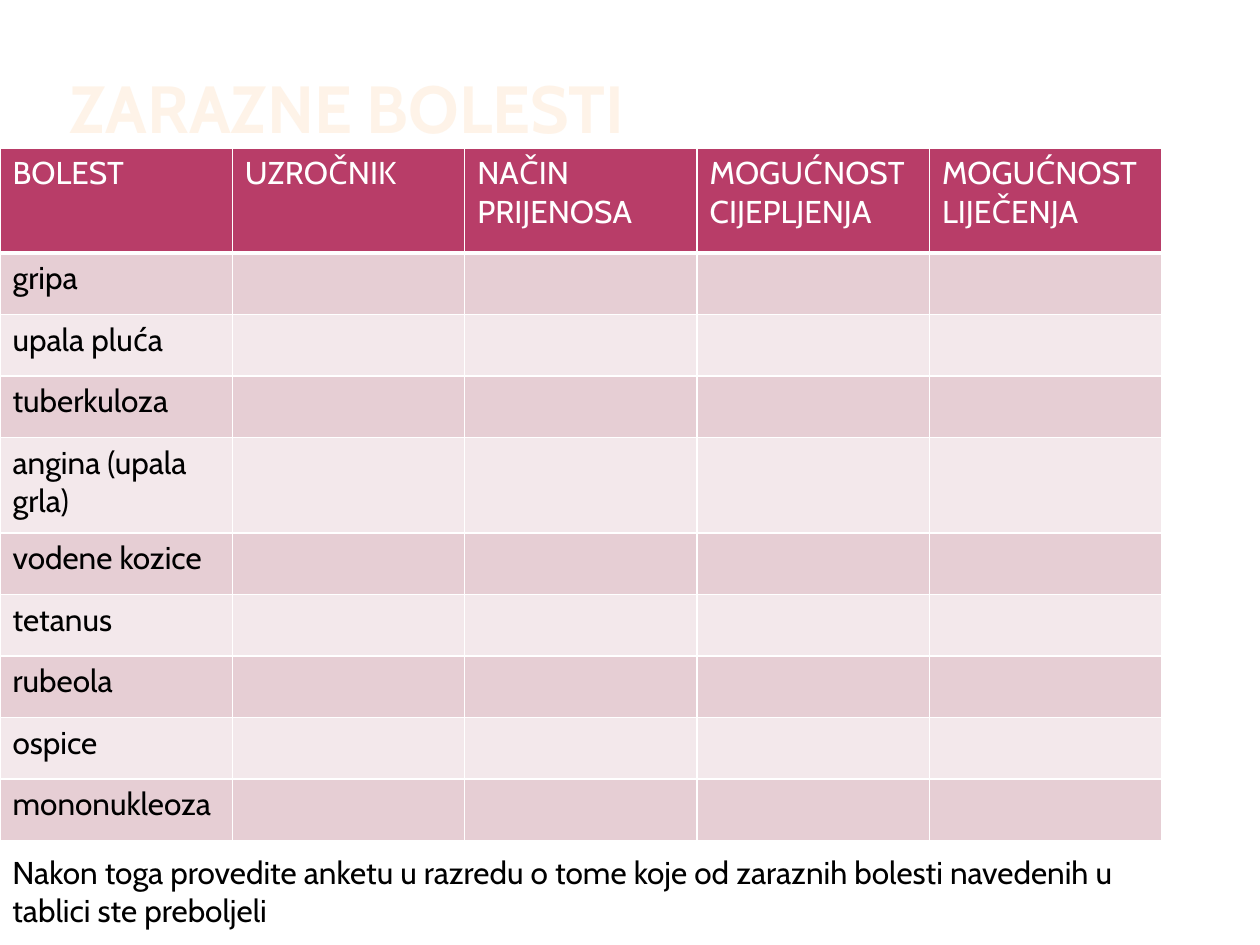
from typing import NamedTuple

import lxml.etree
import pptx
import pptx.dml.color
import pptx.enum.text
import pptx.oxml.ns
import pptx.util

Cm = pptx.util.Cm
Pt = pptx.util.Pt
RGB = pptx.dml.color.RGBColor
Enum = pptx.enum.text

WHITE = RGB(0xFF, 0xFF, 0xFF)
BLACK = RGB(0, 0, 0)
CREAM = RGB(0xFE, 0xF3, 0xE8)
BERRY = RGB(0xB8, 0x3D, 0x68)
ROSE = RGB(0xE6, 0xCE, 0xD4)
BLUSH = RGB(0xF3, 0xE8, 0xEB)

WIDTH = Cm(23.42)
HEADS = ["BOLEST", "UZROČNIK", "NAČIN PRIJENOSA",
         "MOGUĆNOST CIJEPLJENJA", "MOGUĆNOST LIJEČENJA"]


class Row(NamedTuple):
    texts: list[str]
    fill: RGB
    color: RGB = BLACK
    height: float = 1.24
    top: int = 1
    base: int = 1


def set_font(part, size: int, color: RGB, bold: bool = False) -> None:
    form = {"name": "Cabin", "size": Pt(size), "bold": bold}
    for key, value in form.items():
        setattr(part.font, key, value)
    part.font.color.rgb = color


def add_edge(cell, side: str, width: int) -> None:
    qn = pptx.oxml.ns.qn
    props = cell._tc.get_or_add_tcPr()
    line = lxml.etree.SubElement(props, qn(f"a:ln{side}"), w=str(Pt(width)))
    fill = lxml.etree.SubElement(line, qn("a:solidFill"))
    lxml.etree.SubElement(fill, qn("a:srgbClr"), val=str(WHITE))


def draw_row(table, index: int, row: Row) -> None:
    table.rows[index].height = Cm(row.height)
    edges = {"L": 1, "R": 1, "T": row.top, "B": row.base}
    for col in range(len(HEADS)):
        cell = table.cell(index, col)
        # Edges must come before the fill in the cell properties
        for side, width in edges.items():
            add_edge(cell, side, width)
        cell.fill.solid()
        cell.fill.fore_color.rgb = row.fill
        if col < len(row.texts):
            cell.text = row.texts[col]
        set_font(cell.text_frame.paragraphs[0], 18, row.color)


def place(shape, left: float, top: float, width: int, height: float) -> None:
    box = {"left": Cm(left), "top": Cm(top), "width": width, "height": Cm(height)}
    for key, value in box.items():
        setattr(shape, key, value)


def main() -> None:
    deck = pptx.Presentation()
    deck.slide_width, deck.slide_height = Cm(25.4), Cm(19.05)
    slide = deck.slides.add_slide(deck.slide_layouts[5])

    # Title
    title = slide.shapes.title
    place(title, 1.27, 0.89, Cm(20.12), 2.08)
    frame = title.text_frame
    form = {"text": "ZARAZNE BOLESTI", "vertical_anchor": Enum.MSO_ANCHOR.BOTTOM,
            "auto_size": Enum.MSO_AUTO_SIZE.NONE, "margin_left": Cm(0.13),
            "margin_right": Cm(0.13), "margin_top": 0, "margin_bottom": 0}
    for key, value in form.items():
        setattr(frame, key, value)
    frame.paragraphs[0].alignment = Enum.PP_ALIGN.LEFT
    set_font(frame.paragraphs[0].runs[0], 38, CREAM, True)

    # Table of diseases
    names = ["gripa", "upala pluća", "tuberkuloza", "angina (upala grla)",
             "vodene kozice", "tetanus", "rubeola", "ospice", "mononukleoza"]
    rows = [Row(HEADS, BERRY, WHITE, 2.12, base=3)]
    for index, name in enumerate(names):
        rows.append(Row([name], BLUSH if index % 2 else ROSE,
                        height=1.92 if "(" in name else 1.24,
                        top=1 if index else 3))
    total = Cm(sum(row.height for row in rows))
    table = slide.shapes.add_table(
        len(rows), len(HEADS), 0, Cm(2.98), WIDTH, total).table
    for index, row in enumerate(rows):
        draw_row(table, index, row)

    # Task below the table
    note = slide.shapes.add_textbox(0, 0, 0, 0)
    place(note, 0, 17.07, WIDTH, 1.8)
    note.text_frame.word_wrap = True
    note.text_frame.text = ("Nakon toga provedite anketu u razredu o tome koje od "
                            "zaraznih bolesti navedenih u tablici ste preboljeli")
    set_font(note.text_frame.paragraphs[0].runs[0], 18, BLACK)

    deck.save("out.pptx")


if __name__ == "__main__":
    main()
